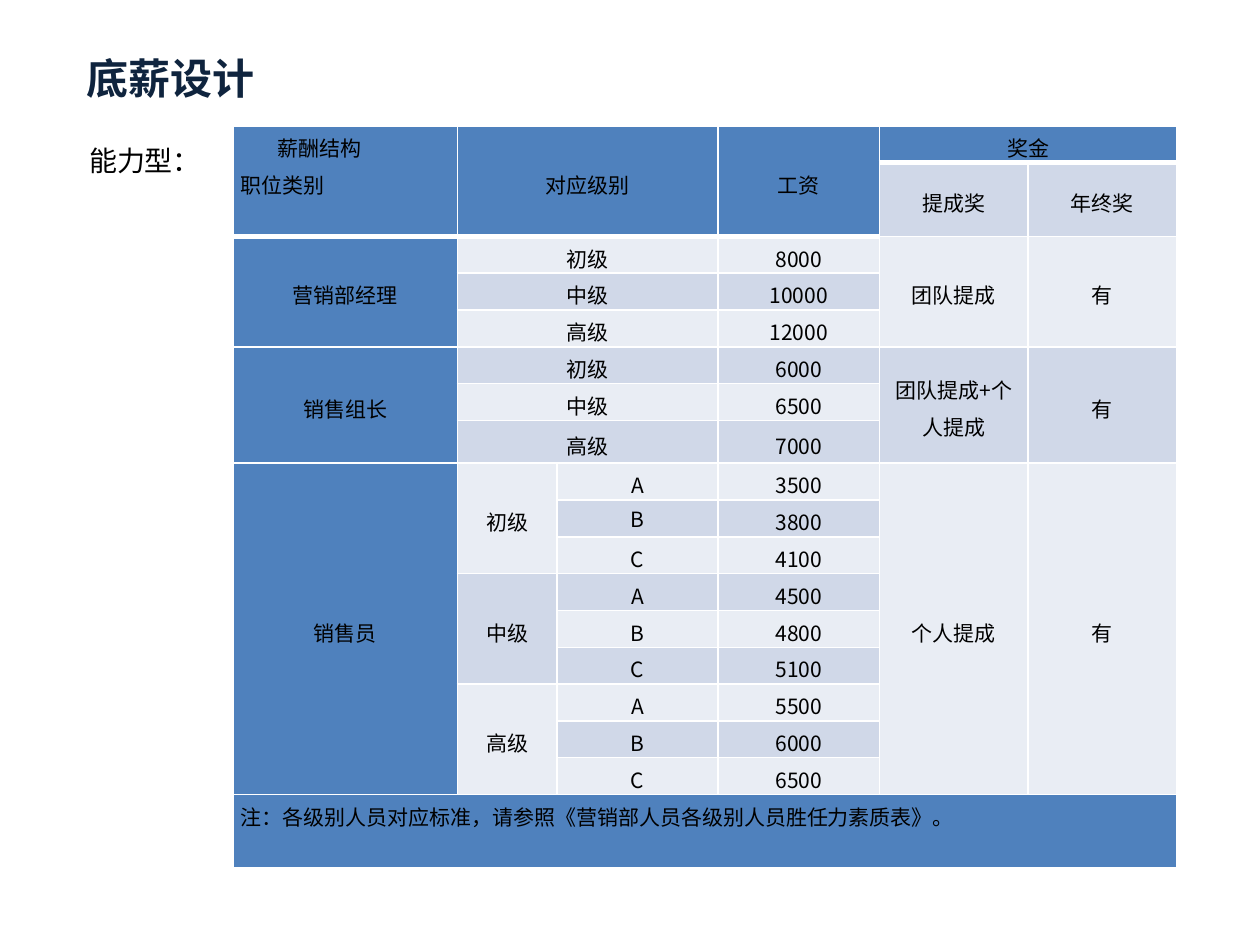
"""Build the base-salary slide with its grade, wage and bonus table."""
from lxml import etree
from pptx import Presentation
from pptx.dml.color import RGBColor
from pptx.enum.text import MSO_ANCHOR, PP_ALIGN
from pptx.oxml.ns import qn
from pptx.util import Inches, Pt

TOP, MIDDLE = MSO_ANCHOR.TOP, MSO_ANCHOR.MIDDLE
CENTER, JUSTIFY = PP_ALIGN.CENTER, PP_ALIGN.JUSTIFY
FONT = "Noto Sans CJK SC"
COLORS = {"title": "0F243E", "text": "000000", "header": "4F81BD",
          "light": "E9EDF4", "dark": "D0D8E8", "border": "FFFFFF"}


def style_text(paragraph, size, color="text", bold=False):
    for run in paragraph.runs:
        run.font.size = Pt(size)
        run.font.bold = bold
        run.font.name = FONT
        run.font.color.rgb = RGBColor.from_string(COLORS[color])
        etree.SubElement(run.font._element, qn("a:ea"), typeface=FONT)


def add_border(cell, side, width):
    line = etree.SubElement(cell._tc.get_or_add_tcPr(), qn("a:ln" + side), w=str(Pt(width)))
    fill = etree.SubElement(line, qn("a:solidFill"))
    etree.SubElement(fill, qn("a:srgbClr"), val=COLORS["border"])


prs = Presentation()
prs.slide_width, prs.slide_height = Inches(10), Inches(7.5)
slide = prs.slides.add_slide(prs.slide_layouts[6])

headings = [
    ("底薪设计", (0.59, 0.37, 3.88, 0.54), TOP, 24, "title", True),
    ("能力型：", (0.61, 0.91, 3.76, 0.72), MIDDLE, 16, "text", False),
]
for words, place, anchor, size, color, bold in headings:
    frame = slide.shapes.add_textbox(*map(Inches, place)).text_frame
    frame.word_wrap = True
    frame.vertical_anchor = anchor
    frame.text = words
    style_text(frame.paragraphs[0], size, color, bold)

column_widths = [1.78, 0.79, 1.28, 1.28, 1.18, 1.18]
row_heights = [0.29, 0.38] + [0.29] * 5 + [0.34] + [0.29] * 9 + [0.58]
NOTE_ROW = len(row_heights) - 1
wages = [8000, 10000, 12000, 6000, 6500, 7000,
         3500, 3800, 4100, 4500, 4800, 5100, 5500, 6000, 6500]
grades = ["初级", "中级", "高级"]
positions = [(2, 3, "营销部经理", "团队提成"),
             (5, 3, "销售组长", "团队提成+个人提成"),
             (8, 9, "销售员", "个人提成")]

entries = [
    (0, 0, 2, 1, "薪酬结构\n职位类别"), (0, 1, 2, 2, "对应级别"),
    (0, 3, 2, 1, "工资"), (0, 4, 1, 2, "奖金"),
    (1, 4, 1, 1, "提成奖"), (1, 5, 1, 1, "年终奖"),
    (NOTE_ROW, 0, 1, 6, "注：各级别人员对应标准，请参照《营销部人员各级别人员胜任力素质表》。"),
]
for first, span, position, commission in positions:
    entries += [(first, 0, span, 1, position), (first, 4, span, 1, commission),
                (first, 5, span, 1, "有")]
    for i, grade in enumerate(grades):
        if span == 3:
            entries.append((first + i, 1, 1, 2, grade))
        else:
            entries.append((first + 3 * i, 1, 3, 1, grade))
            entries += [(first + 3 * i + j, 2, 1, 1, step) for j, step in enumerate("ABC")]
entries += [(row, 3, 1, 1, str(wage)) for row, wage in enumerate(wages, 2)]

pay_table = slide.shapes.add_table(
    len(row_heights), len(column_widths), Inches(1.85), Inches(1),
    Inches(sum(column_widths)), Inches(sum(row_heights))).table
for column, width in zip(pay_table.columns, column_widths):
    column.width = Inches(width)
for row, height in zip(pay_table.rows, row_heights):
    row.height = Inches(height)

for r in range(len(row_heights)):
    for c in range(len(column_widths)):
        cell = pay_table.cell(r, c)
        header_end = 1 if c < 4 else 0
        for side in "LRTB":
            thick = (side == "B" and r <= header_end) or (side == "T" and r == header_end + 1)
            add_border(cell, side, 3 if thick else 1)
        is_header = c == 0 or r <= header_end or r == NOTE_ROW
        band = "header" if is_header else ("dark" if r % 2 else "light")
        cell.fill.solid()
        cell.fill.fore_color.rgb = RGBColor.from_string(COLORS[band])
        cell.margin_left = cell.margin_right = Inches(0.06)
        cell.margin_top = cell.margin_bottom = 0
        for paragraph in cell.text_frame.paragraphs:
            paragraph.font.size = Pt(12)

for r, c, row_span, column_span, words in entries:
    cell = pay_table.cell(r, c)
    if row_span * column_span > 1:
        cell.merge(pay_table.cell(r + row_span - 1, c + column_span - 1))
    is_left = c == 0 and r in (0, NOTE_ROW)
    cell.vertical_anchor = TOP if is_left else MIDDLE
    cell.text_frame.text = words
    for paragraph in cell.text_frame.paragraphs:
        paragraph.alignment = JUSTIFY if is_left else CENTER
        if (r, c) != (9, 2):
            paragraph.line_spacing = Pt(21)
        style_text(paragraph, 12)

corner = pay_table.cell(0, 0).text_frame.paragraphs[0]
corner._p.get_or_add_pPr().set("indent", str(Inches(0.29)))

prs.save("out.pptx")
